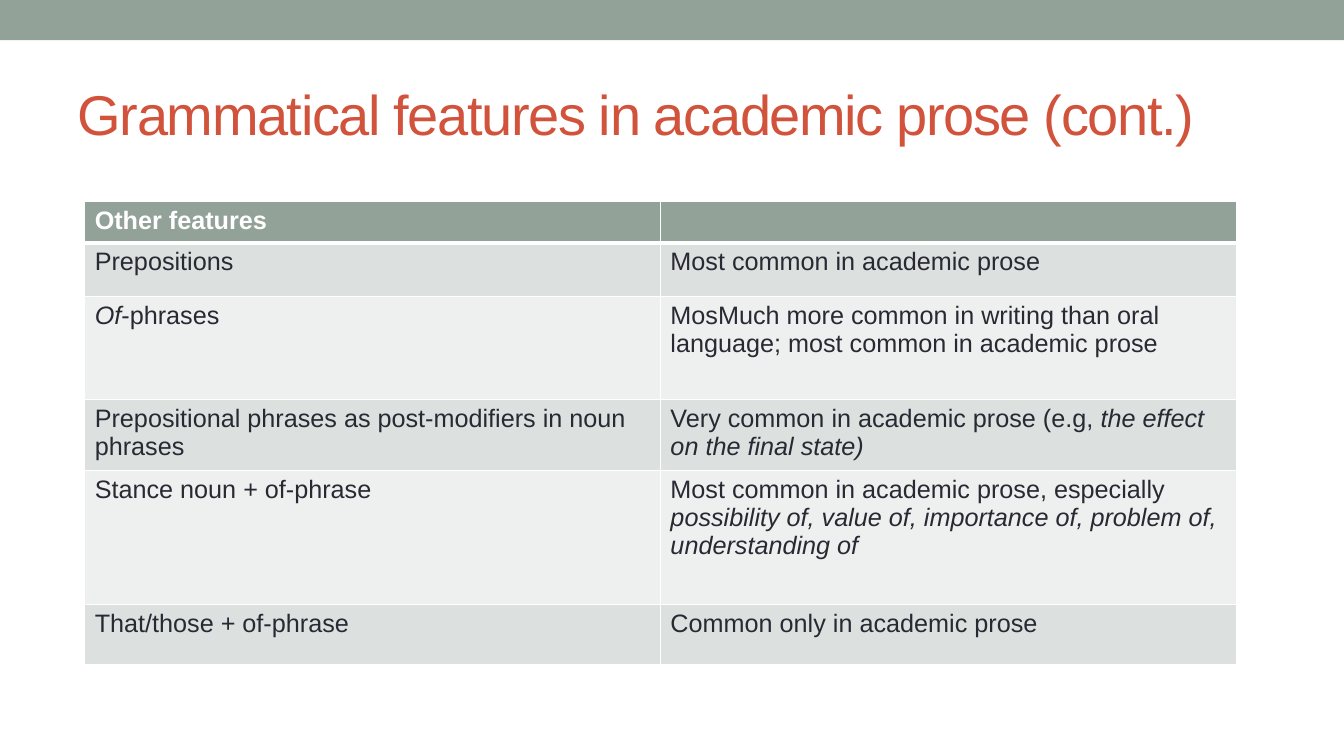
"""Build a slide with a title and a table of grammatical features."""
from lxml import etree
from pptx import Presentation
from pptx import util as u
from pptx.dml import color
from pptx.enum import shapes, text
from pptx.oxml import ns

PX = 9144
SAGE, WHITE, INK, RUST = "93A299", "FFFFFF", "292934", "D2533C"
BANDS = ("DCE0DE", "EEF0EF")
HEADER = {"name": "Arial", "size": u.Pt(18), "bold": True}
BODY = {**HEADER, "bold": False}
TITLE = {**BODY, "size": u.Pt(40)}
ROW_HEIGHTS = (41, 53, 102, 71, 133, 59)
ROWS = (
    ([("Other features", False)], []),
    ([("Prepositions", False)], [("Most common in academic prose", False)]),
    ([("Of", True), ("-phrases", False)],
     [("MosMuch more common in writing than oral language; "
       "most common in academic prose", False)]),
    ([("Prepositional phrases as post-modifiers in noun phrases", False)],
     [("Very common in academic prose (e.g, ", False),
      ("the effect on the final state)", True)]),
    ([("Stance noun + of-phrase", False)],
     [("Most common in academic prose, especially ", False),
      ("possibility of, value of, importance of, problem of, understanding of", True)]),
    ([("That/those + of-phrase", False)], [("Common only in academic prose", False)]),
)


def rgb(value):
    """Return the colour for a hex string."""
    return color.RGBColor.from_string(value)


def emu(box):
    """Turn lengths in px into EMU."""
    return [length * PX for length in box]


def set_font(font, values, fill):
    """Apply format values and a colour to a font."""
    for name, value in values.items():
        setattr(font, name, value)
    font.color.rgb = rgb(fill)


def add_band(slide, box):
    """Draw the plain band in the box."""
    band = slide.shapes.add_shape(shapes.MSO_SHAPE.RECTANGLE, *emu(box))
    band.shadow.inherit = False
    band.fill.solid()
    band.fill.fore_color.rgb = rgb(SAGE)
    band.line.fill.background()


def place_title(slide, box, wording):
    """Move the title placeholder to the box and fill it."""
    title = slide.shapes.title
    for name, value in zip(("left", "top", "width", "height"), emu(box)):
        setattr(title, name, value)
    frame = title.text_frame
    frame.auto_size = text.MSO_AUTO_SIZE.NONE
    frame.vertical_anchor = text.MSO_ANCHOR.MIDDLE
    paragraph = frame.paragraphs[0]
    paragraph.alignment = text.PP_ALIGN.LEFT
    run = paragraph.add_run()
    run.text = wording
    set_font(run.font, TITLE, RUST)
    run.font._element.set("spc", "-100")


def set_borders(cell, top, bottom):
    """Give a cell white borders, with top and bottom widths in points."""
    properties = cell._tc.get_or_add_tcPr()
    widths = {"a:lnL": 1, "a:lnR": 1, "a:lnT": top, "a:lnB": bottom}
    for index, (tag, width) in enumerate(widths.items()):
        line = etree.Element(ns.qn(tag), w=str(u.Pt(width)))
        fill = etree.SubElement(line, ns.qn("a:solidFill"))
        etree.SubElement(fill, ns.qn("a:srgbClr"), val=WHITE)
        properties.insert(index, line)


def fill_cell(cell, runs, row_index):
    """Write the runs into a cell and format it for its row."""
    is_header = row_index == 0
    cell.fill.solid()
    cell.fill.fore_color.rgb = rgb(SAGE if is_header else BANDS[(row_index - 1) % 2])
    set_borders(cell, 3 if row_index == 1 else 1, 3 if is_header else 1)
    paragraph = cell.text_frame.paragraphs[0]
    for wording, italic in runs:
        run = paragraph.add_run()
        run.text = wording
        values = {**(HEADER if is_header else BODY), "italic": italic}
        set_font(run.font, values, WHITE if is_header else INK)


def add_features(slide, box):
    """Draw the table of features in the box."""
    table = slide.shapes.add_table(len(ROWS), 2, *emu(box)).table
    for row_index, (height, contents) in enumerate(zip(ROW_HEIGHTS, ROWS)):
        table.rows[row_index].height = height * PX
        for column_index, runs in enumerate(contents):
            fill_cell(table.cell(row_index, column_index), runs, row_index)


def main():
    """Build and save the presentation."""
    presentation = Presentation()
    presentation.slide_width, presentation.slide_height = emu((1333, 750))
    slide = presentation.slides.add_slide(presentation.slide_layouts[5])
    add_band(slide, (0, 0, 1333, 40))
    place_title(slide, (67, 58, 1200, 108), "Grammatical features in academic prose (cont.)")
    add_features(slide, (84, 200, 1142, sum(ROW_HEIGHTS)))
    presentation.save("out.pptx")


if __name__ == "__main__":
    main()
